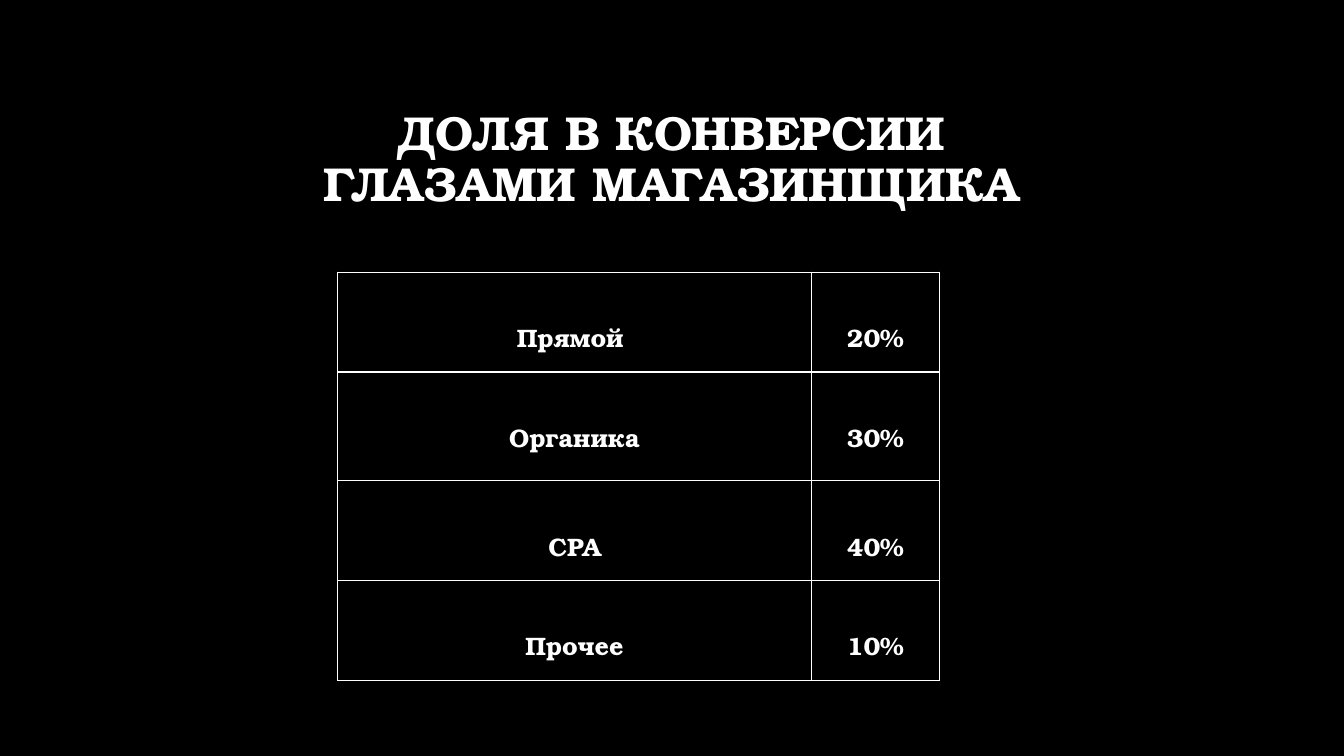
from dataclasses import dataclass

from lxml.etree import SubElement
from pptx import Presentation
from pptx.dml.color import RGBColor
from pptx.enum.text import MSO_ANCHOR as Anchor, PP_ALIGN as Align
from pptx.oxml.ns import qn
from pptx.slide import Slide
from pptx.table import _Cell as Cell
from pptx.text.text import _Paragraph as Paragraph
from pptx.util import Pt

BLACK = RGBColor(0x00, 0x00, 0x00)
WHITE = RGBColor(0xFF, 0xFF, 0xFF)
FONT = "TeX Gyre Bonum"
COLUMN_WIDTHS = (338.4, 91.4)


@dataclass
class Channel:
    name: str
    share: str
    height: float = 71.3


CHANNELS = (
    Channel("Прямой ", "20%"),
    Channel("Органика", "30%", 77.8),
    Channel("СРА", "40%"),
    Channel("Прочее", "10%"),
)


def style_text(p: Paragraph, size: float) -> None:
    p.alignment = Align.CENTER
    p.font.name = FONT
    p.font.size = Pt(size)
    p.font.bold = True
    p.font.color.rgb = WHITE


def add_borders(cell: Cell) -> None:
    tc_pr = cell._tc.get_or_add_tcPr()
    for position, side in enumerate(("lnL", "lnR", "lnT", "lnB")):
        ln = SubElement(tc_pr, qn(f"a:{side}"), w=str(Pt(1)))
        fill = SubElement(ln, qn("a:solidFill"))
        SubElement(fill, qn("a:srgbClr"), val=str(WHITE))
        tc_pr.insert(position, ln)  # borders precede the cell fill


def fill_cell(cell: Cell, text: str) -> None:
    cell.text = text
    cell.vertical_anchor = Anchor.TOP
    cell.margin_top = Pt(33)
    cell.fill.background()
    add_borders(cell)
    style_text(cell.text_frame.paragraphs[0], 18)


def add_title(slide: Slide) -> None:
    sp = slide.shapes.add_textbox(Pt(96.5), Pt(51.8), Pt(766), Pt(103))
    tf = sp.text_frame
    tf.word_wrap = True
    tf.vertical_anchor = Anchor.BOTTOM
    p = tf.paragraphs[0]
    p.text = "ДОЛЯ В КОНВЕРСИИ\vГЛАЗАМИ МАГАЗИНЩИКА"
    p.line_spacing = 0.9
    style_text(p, 34)


def add_share_table(slide: Slide) -> None:
    frame = slide.shapes.add_table(
        len(CHANNELS), len(COLUMN_WIDTHS), Pt(241.2), Pt(194.4),
        Pt(sum(COLUMN_WIDTHS)), Pt(sum(c.height for c in CHANNELS)))
    table = frame.table
    table.first_row = table.horz_banding = False
    for column, width in zip(table.columns, COLUMN_WIDTHS):
        column.width = Pt(width)
    for i, channel in enumerate(CHANNELS):
        table.rows[i].height = Pt(channel.height)
        fill_cell(table.cell(i, 0), channel.name)
        fill_cell(table.cell(i, 1), channel.share)


def main() -> None:
    prs = Presentation()
    prs.slide_width, prs.slide_height = Pt(960), Pt(540)
    slide = prs.slides.add_slide(prs.slide_layouts[6])

    # Background
    slide.background.fill.solid()
    slide.background.fill.fore_color.rgb = BLACK

    # Heading and conversion shares
    add_title(slide)
    add_share_table(slide)
    prs.save("out.pptx")


if __name__ == "__main__":
    main()
